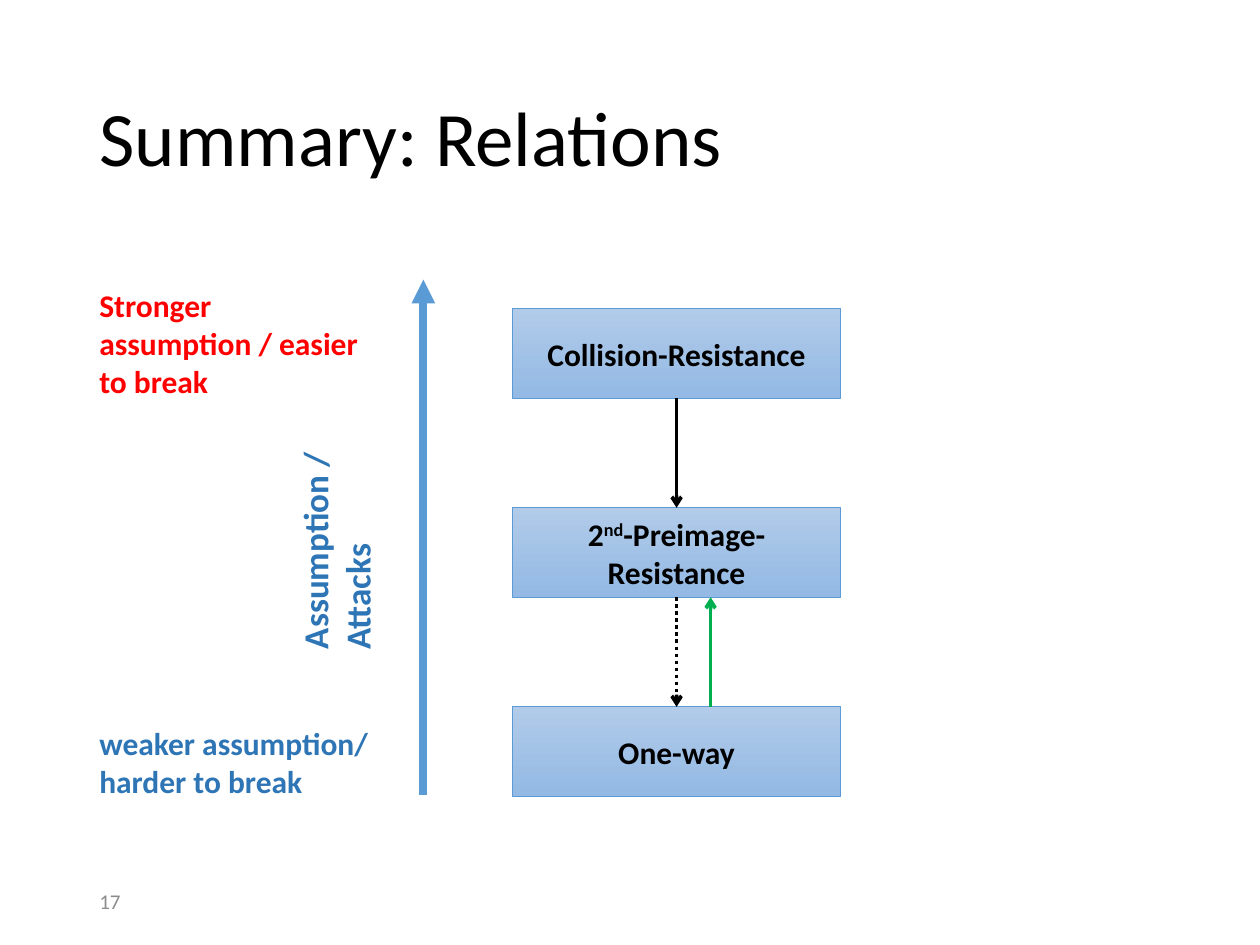
"""Build the slide that summarises relations between hash function properties."""
from dataclasses import dataclass
from typing import Optional

from lxml import etree
from pptx import Presentation
from pptx import util as u
from pptx.dml.color import RGBColor
from pptx.enum import dml, shapes, text
from pptx.oxml import ns

BLACK = RGBColor(0x00, 0x00, 0x00)
GRAY = RGBColor(0x8C, 0x8C, 0x8C)
RED = RGBColor(0xFF, 0x00, 0x00)
GREEN = RGBColor(0x00, 0xB0, 0x50)
BLUE = RGBColor(0x5B, 0x9B, 0xD5)
DARK_BLUE = RGBColor(0x2E, 0x75, 0xB6)
BOX_TOP = RGBColor(0xB1, 0xCB, 0xE9)
BOX_BOTTOM = RGBColor(0x93, 0xB9, 0xE4)

BOX_LEFT, BOX_FIRST, BOX_STEP = 4.07, 2.45, 1.58
BOX_WIDTH, BOX_HEIGHT = 2.6, 0.71
BOX_RUNS = [["Collision-Resistance"], ["2", "nd", "-Preimage-Resistance"], ["One-way"]]


@dataclass
class Label:
    lines: list[str]
    at: tuple[float, float, float, float]
    color: RGBColor
    size: int = 18
    bold: bool = True
    rotation: int = 0
    anchor: text.MSO_ANCHOR = text.MSO_ANCHOR.TOP


@dataclass
class Arrow:
    start: tuple[float, float]
    end: tuple[float, float]
    color: RGBColor = BLACK
    width: float = 2
    head: str = "arrow"
    dash: Optional[dml.MSO_LINE] = None


LABELS = [
    Label(["17"], (0.69, 6.95, 2.25, 0.4), GRAY, 12, False, anchor=text.MSO_ANCHOR.MIDDLE),
    Label(["Assumption / Attacks"], (1.74, 3.94, 1.85, 0.77), DARK_BLUE, 20, rotation=270),
    Label(["Stronger assumption / easier to break"], (0.69, 2.22, 2.47, 0.71), RED),
    Label(["weaker assumption/", "harder to break"], (0.69, 5.7, 2.47, 0.71), DARK_BLUE),
]


def add_run(p, words: str, size: int, color: RGBColor, bold: bool = False):
    """Append one formatted run to a paragraph."""
    r = p.add_run()
    r.text = words
    style = {"name": "Calibri", "size": u.Pt(size), "bold": bold}
    for key, value in style.items():
        setattr(r.font, key, value)
    r.font.color.rgb = color
    return r


def add_label(s, label: Label) -> None:
    """Draw a text box with one paragraph per line."""
    box = s.shapes.add_textbox(*map(u.Inches, label.at))
    box.rotation = label.rotation
    tf = box.text_frame
    tf.word_wrap = True
    tf.vertical_anchor = label.anchor
    for i, line in enumerate(label.lines):
        p = tf.add_paragraph() if i else tf.paragraphs[0]
        add_run(p, line, label.size, label.color, label.bold)


def add_box(s, top: float, runs: list[str]):
    """Draw a gradient box, raising its ordinal suffix."""
    sp = s.shapes.add_shape(shapes.MSO_SHAPE.RECTANGLE, *map(
        u.Inches, (BOX_LEFT, top, BOX_WIDTH, BOX_HEIGHT)))
    sp.shadow.inherit = False
    sp.fill.gradient()
    sp.fill.gradient_angle = 270
    for stop, color in zip(sp.fill.gradient_stops, (BOX_TOP, BOX_BOTTOM)):
        stop.color.rgb = color
    sp.line.color.rgb = BLUE
    sp.line.width = u.Pt(0.5)
    tf = sp.text_frame
    tf.word_wrap = True
    tf.vertical_anchor = text.MSO_ANCHOR.MIDDLE
    p = tf.paragraphs[0]
    p.alignment = text.PP_ALIGN.CENTER
    for words in runs:
        r = add_run(p, words, 18, BLACK, True)
        if words == "nd":
            r.font._element.set("baseline", "30000")
    return sp


def add_arrow(s, arrow: Arrow):
    """Draw a straight connector with a head at its end."""
    line = s.shapes.add_connector(shapes.MSO_CONNECTOR.STRAIGHT, *map(
        u.Inches, arrow.start + arrow.end))
    line.line.color.rgb = arrow.color
    line.line.width = u.Pt(arrow.width)
    if arrow.dash:
        line.line.dash_style = arrow.dash
    ln = line.line._get_or_add_ln()
    etree.SubElement(ln, ns.qn("a:tailEnd"), type=arrow.head)
    etree.SubElement(line._element.spPr, ns.qn("a:effectLst"))
    return line


def add_title(s) -> None:
    """Place and format the title."""
    title = s.shapes.title
    place = dict(zip(("left", "top", "width", "height"), (0.69, 0.4, 8.62, 1.45)))
    for key, value in place.items():
        setattr(title, key, u.Inches(value))
    title.text_frame.vertical_anchor = text.MSO_ANCHOR.MIDDLE
    p = title.text_frame.paragraphs[0]
    p.alignment = text.PP_ALIGN.LEFT
    p.line_spacing = 0.9
    add_run(p, "Summary: Relations", 44, BLACK)


def main() -> None:
    """Assemble and save the slide."""
    prs = Presentation()
    prs.slide_width, prs.slide_height = u.Inches(10), u.Inches(7.5)
    s = prs.slides.add_slide(prs.slide_layouts[5])
    add_title(s)

    tops = [BOX_FIRST + i * BOX_STEP for i in range(len(BOX_RUNS))]
    boxes = [add_box(s, top, runs) for top, runs in zip(tops, BOX_RUNS)]
    middle = BOX_LEFT + BOX_WIDTH / 2
    for i, dash in enumerate((None, dml.MSO_LINE.ROUND_DOT)):
        line = add_arrow(s, Arrow(
            (middle, tops[i] + BOX_HEIGHT), (middle, tops[i + 1]), dash=dash))
        line.begin_connect(boxes[i], 2)
        line.end_connect(boxes[i + 1], 0)
    add_arrow(s, Arrow((5.64, tops[2]), (5.64, tops[1] + BOX_HEIGHT), GREEN))
    add_arrow(s, Arrow((3.36, 6.31), (3.36, 2.22), BLUE, 4.5, "triangle"))

    for label in LABELS:
        add_label(s, label)
    prs.save("out.pptx")


if __name__ == "__main__":
    main()
